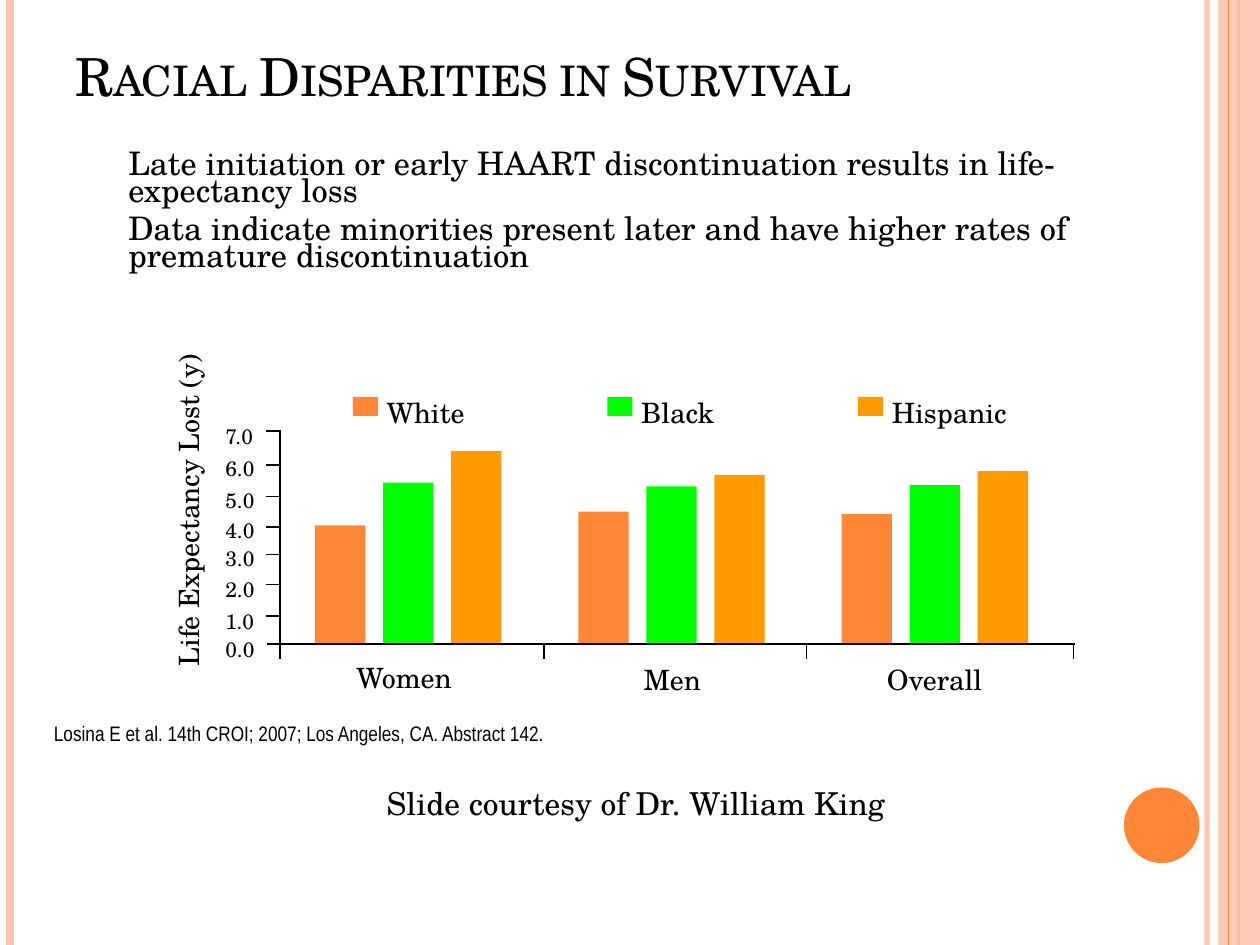
"""Build a slide on racial disparities in survival with a drawn bar chart."""
import pptx
import pptx.util
import pptx.dml.color
import pptx.enum.shapes
import pptx.oxml.ns
from lxml import etree

Inches = pptx.util.Inches
Pt = pptx.util.Pt
RGBColor = pptx.dml.color.RGBColor
Kind = pptx.enum.shapes.MSO_SHAPE
qn = pptx.oxml.ns.qn

BLACK = RGBColor(0x00, 0x00, 0x00)
ORANGE = RGBColor(0xFE, 0x86, 0x37)
PEACH = RGBColor(0xFE, 0xC3, 0xAE)
GREEN = RGBColor(0x00, 0xFF, 0x00)
AMBER = RGBColor(0xFF, 0x9B, 0x00)
SERIF = "TeX Gyre Schola"

deck = pptx.Presentation()
deck.slide_width = Inches(10)
deck.slide_height = Inches(7.5)
slide = deck.slides.add_slide(deck.slide_layouts[6])
shapes = slide.shapes


def draw(x1, y1, x2, y2, color=BLACK, width=1, alpha=100, kind=None):
    if kind is None:
        item = shapes.add_connector(
            pptx.enum.shapes.MSO_CONNECTOR.STRAIGHT,
            Inches(x1), Inches(y1), Inches(x2), Inches(y2))
        fill = item.line.fill
        item.line.width = Pt(width)
    else:
        item = shapes.add_shape(
            kind, Inches(x1), Inches(y1), Inches(x2 - x1), Inches(y2 - y1))
        fill = item.fill
        item.line.fill.background()
        item.shadow.inherit = False
    fill.solid()
    fill.fore_color.rgb = color
    props = item._element.spPr
    if kind is None:
        etree.SubElement(props, qn("a:effectLst"))
    if alpha < 100:
        tint = next(props.iter(qn("a:srgbClr")))
        etree.SubElement(tint, qn("a:alpha")).set("val", str(alpha * 1000))


def write(lines, x, y, w, h, size, font=SERIF, wrap=False):
    box = shapes.add_textbox(Inches(x), Inches(y), Inches(w), Inches(h))
    frame = box.text_frame
    frame.word_wrap = wrap
    for i, line in enumerate(lines):
        para = frame.add_paragraph() if i else frame.paragraphs[0]
        run = para.add_run()
        run.text = line
        run.font.size = Pt(size)
        run.font.name = font
        run.font.color.rgb = BLACK
    return box


for x, color, width, alpha in [
        (9.58, PEACH, 3, 93), (0.08, PEACH, 4.5, 100), (9.83, ORANGE, 1.5, 100)]:
    draw(x, 0, x, 7.5, color, width, alpha)
draw(9.67, 0, 10, 7.5, PEACH, alpha=87, kind=Kind.RECTANGLE)
draw(9.75, 0, 9.75, 7.5, ORANGE, 0.75)
draw(8.92, 6.25, 9.52, 6.85, ORANGE, kind=Kind.OVAL)

title = write(["Racial Disparities in Survival"], 0.5, 0.3, 9, 0.87, 30, wrap=True)
title.text_frame.paragraphs[0].runs[0].font._element.set("cap", "small")

body = write([
    "Late initiation or early HAART discontinuation results in life- expectancy loss",
    "Data indicate minorities present later and have higher rates of premature discontinuation",
], 0.48, 1.17, 8.5, 1.08, 18.5, wrap=True)
for para in body.text_frame.paragraphs:
    para.line_spacing = 0.7
    para.space_before = Pt(6)
    para._p.get_or_add_pPr().set("marL", str(Inches(0.44)))

base = 5.11
ticks = [base, 4.89, 4.64, 4.4, 4.18, 3.94, 3.69, 3.42]
tops = [5, 4.78, 4.53, 4.28, 4.06, 3.82, 3.57, 3.31]
for value, (tick, top) in enumerate(zip(ticks, tops)):
    write([f"{value}.0"], 1.69, top, 0.43, 0.3, 12)
    if value:
        draw(2.11, tick, 2.22, tick)

colors = [ORANGE, GREEN, AMBER]
groups = [
    (2.5, [4.17, 3.83, 3.58]),
    (4.59, [4.06, 3.86, 3.77]),
    (6.68, [4.08, 3.85, 3.74]),
]
for left, peaks in groups:
    for i, (peak, color) in enumerate(zip(peaks, colors)):
        x = left + 0.54 * i
        draw(x, peak, x + 0.4, base, color, kind=Kind.RECTANGLE)

draw(2.22, 3.41, 2.22, base)
draw(2.12, base, 8.53, base)
for x in [2.22, 4.32, 6.4, 8.52]:
    draw(x, base, x, 5.23)

label = write(["Life Expectancy Lost (y)"], 0.14, 3.84, 2.72, 0.37, 16)
label.rotation = 270
for name, x, y, w in [
        ("Women", 2.73, 5.19, 0.98), ("Men", 5.01, 5.21, 0.66),
        ("Overall", 6.94, 5.21, 0.98)]:
    write([name], x, y, w, 0.37, 16)

for name, x, w, color in [
        ("White", 2.8, 0.83, ORANGE), ("Black", 4.82, 0.79, GREEN),
        ("Hispanic", 6.81, 1.12, AMBER)]:
    draw(x, 3.15, x + 0.2, 3.3, color, kind=Kind.RECTANGLE)
    write([name], x + 0.17, 3.09, w, 0.37, 16)

write(["Losina E et al. 14th CROI; 2007; Los Angeles, CA. Abstract 142."],
      0.33, 5.67, 8.53, 0.5, 12, "Arial Narrow", True)
write(["Slide courtesy of Dr. William King"], 2.97, 6.17, 4.2, 0.4, 18)

deck.save("out.pptx")
